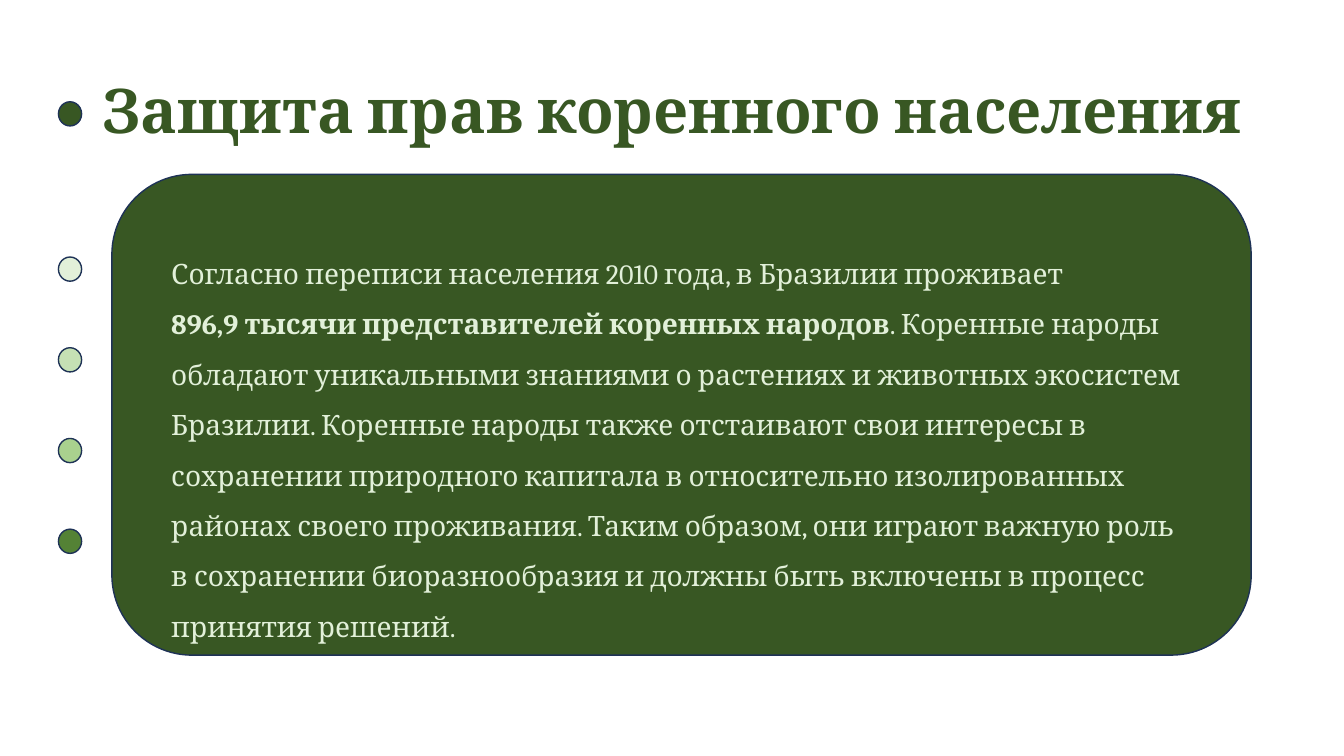
from pptx import Presentation
from pptx import util as u
from pptx.dml.color import RGBColor
from pptx.enum import shapes, text

DARK = RGBColor(0x38, 0x57, 0x23)
PALE = RGBColor(0xE2, 0xF0, 0xD9)
LIGHT = RGBColor(0xC5, 0xE0, 0xB4)
MEDIUM = RGBColor(0xA9, 0xD1, 0x8E)
DEEP = RGBColor(0x54, 0x82, 0x35)
OUTLINE = RGBColor(0x1E, 0x32, 0x56)

FONT = "Cambria"
WIDTH, HEIGHT = u.Inches(13.33), u.Inches(7.5)

TITLE = "Защита прав коренного населения"
CENSUS = "Согласно переписи населения 2010 года, в Бразилии проживает "
FIGURE = "896,9 тысячи представителей коренных народов"
ROLE = (
    ". Коренные народы обладают уникальными знаниями о растениях и животных "
    "экосистем Бразилии. Коренные народы также отстаивают свои интересы в "
    "сохранении природного капитала в относительно изолированных районах своего "
    "проживания. Таким образом, они играют важную роль в сохранении "
    "биоразнообразия и должны быть включены в процесс принятия решений."
)


def inches(*lengths):
    return [u.Inches(length) for length in lengths]


def style(font, size, color, bold):
    font.name = FONT
    font.size = u.Pt(size)
    font.color.rgb = color
    font.bold = bold


def add_outlined(page, kind, box, fill):
    shape = page.shapes.add_shape(kind, *box)
    shape.shadow.inherit = False
    shape.fill.solid()
    shape.fill.fore_color.rgb = fill
    shape.line.color.rgb = OUTLINE
    shape.line.width = u.Pt(1)
    return shape


def fill_title(page, box):
    title = page.shapes.title
    title.left, title.top, title.width, title.height = box
    frame = title.text_frame
    frame.text = TITLE
    frame.word_wrap = True
    frame.auto_size = text.MSO_AUTO_SIZE.NONE
    frame.vertical_anchor = text.MSO_ANCHOR.MIDDLE
    para = frame.paragraphs[0]
    para.alignment = text.PP_ALIGN.CENTER
    para.line_spacing = 0.9
    style(para.runs[0].font, 44, DARK, True)


def add_dots(page, box, step, colors):
    left, top, width, height = box
    for row, color in enumerate(colors):
        dot = (left, top + row * step, width, height)
        add_outlined(page, shapes.MSO_SHAPE.OVAL, dot, color)


def add_panel(page, box):
    left, top, width, height = box
    add_outlined(page, shapes.MSO_SHAPE.ROUNDED_RECTANGLE, box, DARK)
    margin_x, margin_y = inches(0.49, 0.6)
    body = page.shapes.add_textbox(
        left + margin_x, top + margin_y, width - 2 * margin_x, height - 2 * margin_y
    )
    frame = body.text_frame
    frame.word_wrap = True
    frame.auto_size = text.MSO_AUTO_SIZE.SHAPE_TO_FIT_TEXT
    para = frame.paragraphs[0]
    para.line_spacing = 1.5
    para.text = CENSUS + "\v"
    for words in (FIGURE, ROLE):
        para.add_run().text = words
    for span in para.runs:
        style(span.font, 20, PALE, span.text == FIGURE)


def main():
    deck = Presentation()
    deck.slide_width, deck.slide_height = WIDTH, HEIGHT
    page = deck.slides.add_slide(deck.slide_layouts[5])
    fill_title(page, inches(0.92, 0.4, 11.5, 1.45))
    step = u.Inches(0.9)
    add_dots(page, inches(0.58, 2.55, 0.23, 0.24), step, (PALE, LIGHT, MEDIUM, DEEP))
    add_dots(page, inches(0.58, 1.01, 0.23, 0.24), step, (DARK,))
    add_panel(page, inches(1.11, 1.73, 11.3, 4.77))
    deck.save("out.pptx")


if __name__ == "__main__":
    main()
